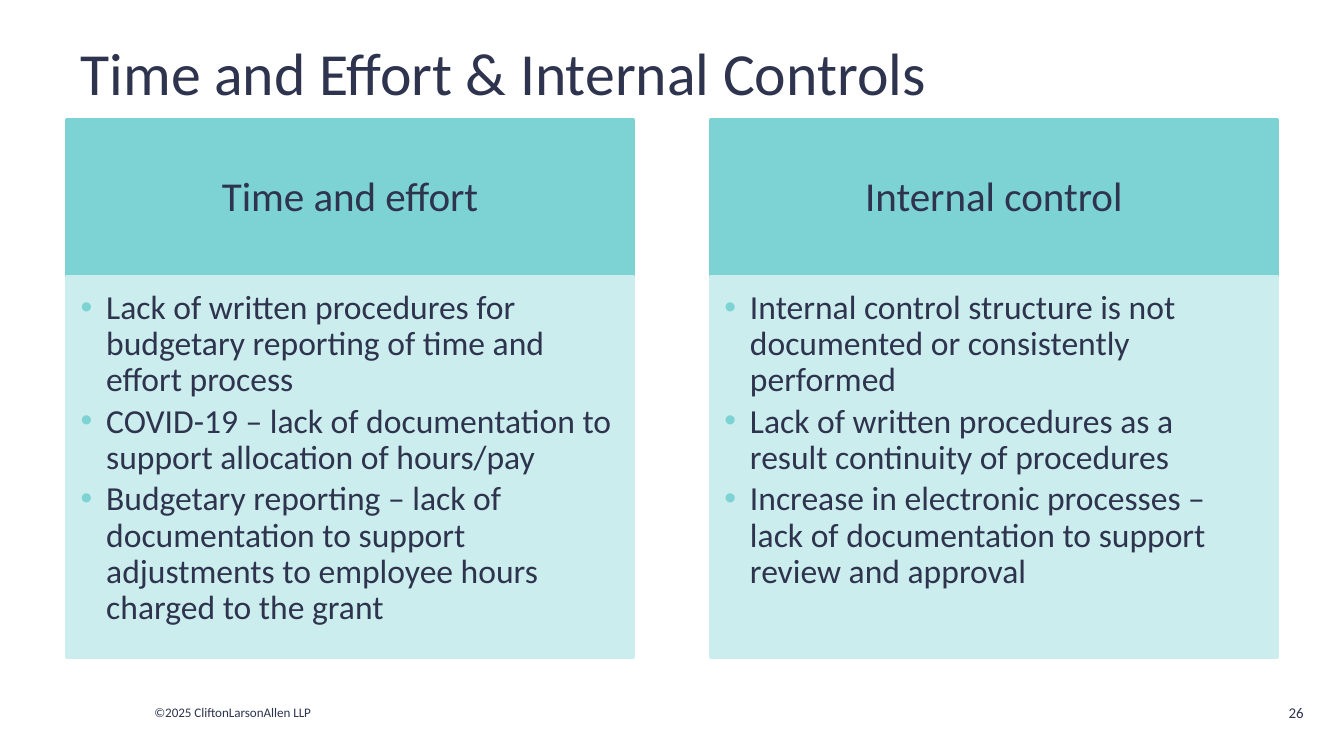
from dataclasses import dataclass

import pptx
import pptx.dml.color
import pptx.enum.text
import pptx.oxml
import pptx.oxml.ns
import pptx.util
from pptx.dml.color import RGBColor
from pptx.enum.text import MSO_ANCHOR, MSO_AUTO_SIZE, PP_ALIGN
from pptx.util import Inches

NAVY = RGBColor(0x2E, 0x33, 0x4E)
TEAL = RGBColor(0x7D, 0xD2, 0xD3)
PALE_TEAL = RGBColor(0xCB, 0xED, 0xED)
FONT = "Calibri"
COMPARISON_LAYOUT = 4

LEFT, COL_W, COL_STEP = 0.5, 4.21, 4.79
HEAD_Y, HEAD_H = 0.89, 1.17
BODY_Y, BODY_H = HEAD_Y + HEAD_H, 2.83
BULLET_INDENT = 0.19


@dataclass
class Column:
    heading: str
    points: list[str]


COLUMNS = [
    Column("Time and effort", [
        "Lack of written procedures for budgetary reporting of time and effort process",
        "COVID-19 – lack of documentation to support allocation of hours/pay",
        "Budgetary reporting – lack of documentation to support adjustments "
        "to employee hours charged to the grant",
    ]),
    Column("Internal control", [
        "Internal control structure is not documented or consistently performed",
        "Lack of written procedures as a result continuity of procedures",
        "Increase in electronic processes – lack of documentation to support "
        "review and approval",
    ]),
]


def place(sp, x: float, y: float, w: float, h: float) -> None:
    sp.left, sp.top, sp.width, sp.height = (Inches(v) for v in (x, y, w, h))


def paint(sp, color: RGBColor) -> None:
    sp.fill.solid()
    sp.fill.fore_color.rgb = color
    sp.line.color.rgb = color
    sp.line.width = pptx.util.Pt(2)


def set_frame(sp, anchor: MSO_ANCHOR, insets=(0.1, 0.05, 0.1, 0.05)):
    tf = sp.text_frame
    tf.word_wrap = True
    tf.auto_size = MSO_AUTO_SIZE.NONE
    tf.vertical_anchor = anchor
    (tf.margin_left, tf.margin_top,
     tf.margin_right, tf.margin_bottom) = (Inches(v) for v in insets)
    return tf


def add_text(p, text: str, size: float, align=PP_ALIGN.LEFT) -> None:
    p.alignment = align
    r = p.add_run()
    r.text = text
    r.font.name = FONT
    r.font.size = pptx.util.Pt(size)
    r.font.bold = False
    r.font.color.rgb = NAVY


def add_bullet(p) -> None:
    pPr = p._p.get_or_add_pPr()
    pPr.set("marL", str(Inches(BULLET_INDENT)))
    pPr.set("indent", str(-Inches(BULLET_INDENT)))
    ns = pptx.oxml.ns.nsdecls("a")
    for xml in (f'<a:buClr {ns}><a:srgbClr val="{TEAL}"/></a:buClr>',
                f'<a:buChar {ns} char="•"/>'):
        pPr.append(pptx.oxml.parse_xml(xml))


def fill_column(head, body, column: Column, x: float) -> None:
    place(head, x, HEAD_Y, COL_W, HEAD_H)
    paint(head, TEAL)
    tf = set_frame(head, MSO_ANCHOR.MIDDLE, (0.17, 0.1, 0.17, 0.1))
    p = tf.paragraphs[0]
    p.line_spacing = 0.9
    p.space_before = 0
    add_text(p, column.heading, 22, PP_ALIGN.CENTER)

    place(body, x, BODY_Y, COL_W, BODY_H)
    paint(body, PALE_TEAL)
    tf = set_frame(body, MSO_ANCHOR.TOP, (0.1, 0.1, 0.14, 0.16))
    for i, point in enumerate(column.points):
        p = tf.add_paragraph() if i else tf.paragraphs[0]
        add_bullet(p)
        p.line_spacing = 0.9
        p.space_before = 0
        p.space_after = pptx.util.Pt(2.7)
        add_text(p, point, 18)


def add_label(s, text: str, box: tuple, size: float, align=PP_ALIGN.LEFT) -> None:
    sp = s.shapes.add_textbox(*(Inches(v) for v in box))
    tf = set_frame(sp, MSO_ANCHOR.MIDDLE)
    add_text(tf.paragraphs[0], text, size, align)


def main() -> None:
    prs = pptx.Presentation()
    prs.slide_width = Inches(10)
    prs.slide_height = prs.slide_width * 9 // 16
    s = prs.slides.add_slide(prs.slide_layouts[COMPARISON_LAYOUT])

    # Title
    title = s.shapes.title
    place(title, LEFT, 0.16, 9, 0.75)
    tf = set_frame(title, MSO_ANCHOR.MIDDLE)
    add_text(tf.paragraphs[0], "Time and Effort & Internal Controls", 32)

    # Two columns, each a heading placeholder and a list placeholder
    for i, column in enumerate(COLUMNS):
        head, body = s.placeholders[2 * i + 1], s.placeholders[2 * i + 2]
        fill_column(head, body, column, LEFT + i * COL_STEP)

    # Footer
    add_label(s, "©2025 CliftonLarsonAllen LLP", (1.05, 5.19, 1.51, 0.22), 7)
    add_label(s, "26", (9.37, 5.11, 0.43, 0.38), 8, PP_ALIGN.RIGHT)

    prs.save("out.pptx")


if __name__ == "__main__":
    main()
